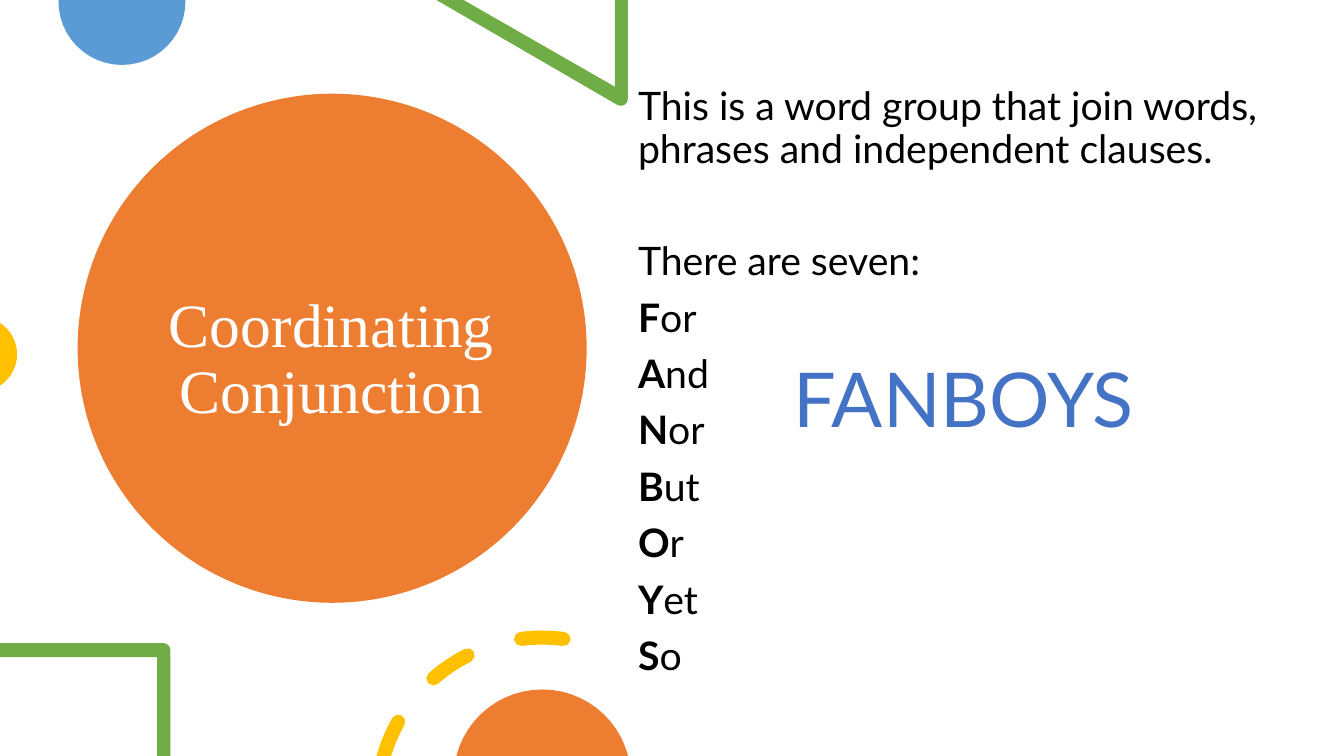
from dataclasses import dataclass
from math import cos, radians, sin

from lxml.etree import SubElement
from pptx import Presentation
from pptx.dml.color import RGBColor as Rgb
from pptx.enum.shapes import MSO_SHAPE as Preset
from pptx.enum.text import MSO_ANCHOR as Anchor
from pptx.enum.text import MSO_AUTO_SIZE as AutoSize
from pptx.enum.text import PP_ALIGN as Align
from pptx.oxml.ns import qn
from pptx.util import Pt


@dataclass(frozen=True)
class Theme:
    orange: Rgb = Rgb.from_string("ED7D31")
    blue: Rgb = Rgb.from_string("5B9BD5")
    green: Rgb = Rgb.from_string("70AD47")
    yellow: Rgb = Rgb.from_string("FFC000")
    accent: Rgb = Rgb.from_string("4472C4")
    white: Rgb = Rgb.from_string("FFFFFF")
    black: Rgb = Rgb.from_string("000000")
    serif: str = "Times New Roman"
    sans: str = "Lato"
    title_size: int = 44
    body_size: int = 28
    callout_size: int = 54


THEME = Theme()
RING_CENTER, OUTER_RADIUS, INNER_RADIUS, CAP_RADIUS = (387.36, 573.48), 123.12, 113.04, 5.04
CONJUNCTIONS = ["For", "And", "Nor", "But", "Or", "Yet", "So"]


def arc(center, radius, start, end, steps=4):
    angles = [radians(start + (end - start) * step / steps) for step in range(steps + 1)]
    return [(center[0] + radius * cos(angle), center[1] + radius * sin(angle)) for angle in angles]


def cap(angle, turn):
    center = arc(RING_CENTER, (OUTER_RADIUS + INNER_RADIUS) / 2, angle, angle, 1)[0]
    return arc(center, CAP_RADIUS, angle + turn, angle + turn + 180)


def cut_dash(outer_start, inner_start, end):
    return (
        arc(RING_CENTER, OUTER_RADIUS, outer_start, end)
        + cap(end, 0)
        + arc(RING_CENTER, INNER_RADIUS, end, inner_start)
    )


def round_dash(start, end):
    return cut_dash(start, start, end) + cap(start, 180)


def paint(shape, color):
    shape.shadow.inherit = False
    shape.fill.solid()
    shape.fill.fore_color.rgb = color
    shape.line.fill.background()


def add_outline(page, color, *contours):
    scaled = [[(Pt(x), Pt(y)) for x, y in contour] for contour in contours]
    builder = page.shapes.build_freeform(*scaled[0][0])
    builder.add_line_segments(scaled[0][1:])
    for points in scaled[1:]:
        builder.move_to(*points[0])
        builder.add_line_segments(points[1:])
    paint(builder.convert_to_shape(), color)


def place(shape, left, top, width, height):
    shape.left, shape.top, shape.width, shape.height = Pt(left), Pt(top), Pt(width), Pt(height)


def style(font, name, size, color):
    font.name, font.size, font.color.rgb = name, Pt(size), color


def add_decorations(page):
    disc = page.shapes.add_shape(Preset.OVAL, Pt(55.44), Pt(66.96), Pt(363.6), Pt(363.6))
    paint(disc, THEME.orange)
    add_outline(page, THEME.blue, arc((87.12, 1.08), 45.36, -1.36, 181.36, 24))
    triangle = [(448.56, 0), (439.2, 0), (439.2, 61.92), (331.2, 0), (311.76, 0)]
    add_outline(page, THEME.green, triangle + arc((443.52, 70.56), 5.04, 120, 0))
    add_outline(page, THEME.yellow, arc((-14.4, 253.08), 26.64, -57.28, 57.28, 16))
    square = [(0, 459.36), (0, 469.44), (112.32, 469.44), (112.32, 540), (121.68, 540)]
    add_outline(page, THEME.green, square + arc((116.64, 464.4), 5.04, 0, -90))
    dashes = [cut_dash(195.78, 197.23, 209.4), round_dash(228.8, 243.2), round_dash(262.6, 277.4)]
    add_outline(page, THEME.yellow, *dashes)
    add_outline(page, THEME.orange, arc((387.36, 555.84), 63.36, 194.48, 345.52, 24))


def fill_title(title, text):
    place(title, 109.44, 97.2, 254.88, 320.4)
    frame = title.text_frame
    frame.text = text
    frame.auto_size = AutoSize.NONE
    frame.vertical_anchor = Anchor.MIDDLE
    para = frame.paragraphs[0]
    para.alignment = Align.CENTER
    para.line_spacing = 0.9
    style(para.font, THEME.serif, THEME.title_size, THEME.white)


def format_item(para, space_before):
    para.line_spacing = 0.9
    para.space_before = Pt(space_before)
    para.alignment = Align.LEFT
    style(para.font, THEME.sans, THEME.body_size, THEME.black)
    properties = para._p.get_or_add_pPr()
    properties.set("marL", "0")
    properties.set("indent", "0")
    bullet = SubElement(properties, qn("a:buNone"))
    properties.find(qn("a:defRPr")).addprevious(bullet)


def fill_body(body):
    place(body, 448.56, 18, 501.12, 483.12)
    frame = body.text_frame
    frame.auto_size = AutoSize.NONE
    frame.vertical_anchor = Anchor.TOP
    frame.margin_top = Pt(44)
    definition = frame.paragraphs[0]
    definition.text = "This is a word group that join words, phrases and independent clauses."
    format_item(definition, 0)
    count = frame.add_paragraph()
    count.text = "There are seven:"
    format_item(count, 50.4)
    for word in CONJUNCTIONS:
        para = frame.add_paragraph()
        initial = para.add_run()
        initial.text = word[0]
        initial.font.bold = True
        para.add_run().text = word[1:]
        format_item(para, 10)


def add_callout(page, text):
    box = page.shapes.add_textbox(Pt(543.6), Pt(247.68), Pt(289.44), Pt(72.72))
    frame = box.text_frame
    frame.word_wrap = True
    frame.text = text
    para = frame.paragraphs[0]
    para.alignment = Align.CENTER
    style(para.font, THEME.sans, THEME.callout_size, THEME.accent)


def main():
    deck = Presentation()
    deck.slide_width, deck.slide_height = Pt(960), Pt(540)
    page = deck.slides.add_slide(deck.slide_layouts[1])
    title, body = page.shapes.title, page.placeholders[1]
    add_decorations(page)
    for placeholder in (title, body):
        page.shapes._spTree.append(placeholder._element)
    fill_title(title, "Coordinating Conjunction")
    fill_body(body)
    add_callout(page, "FANBOYS")
    deck.save("out.pptx")


if __name__ == "__main__":
    main()
